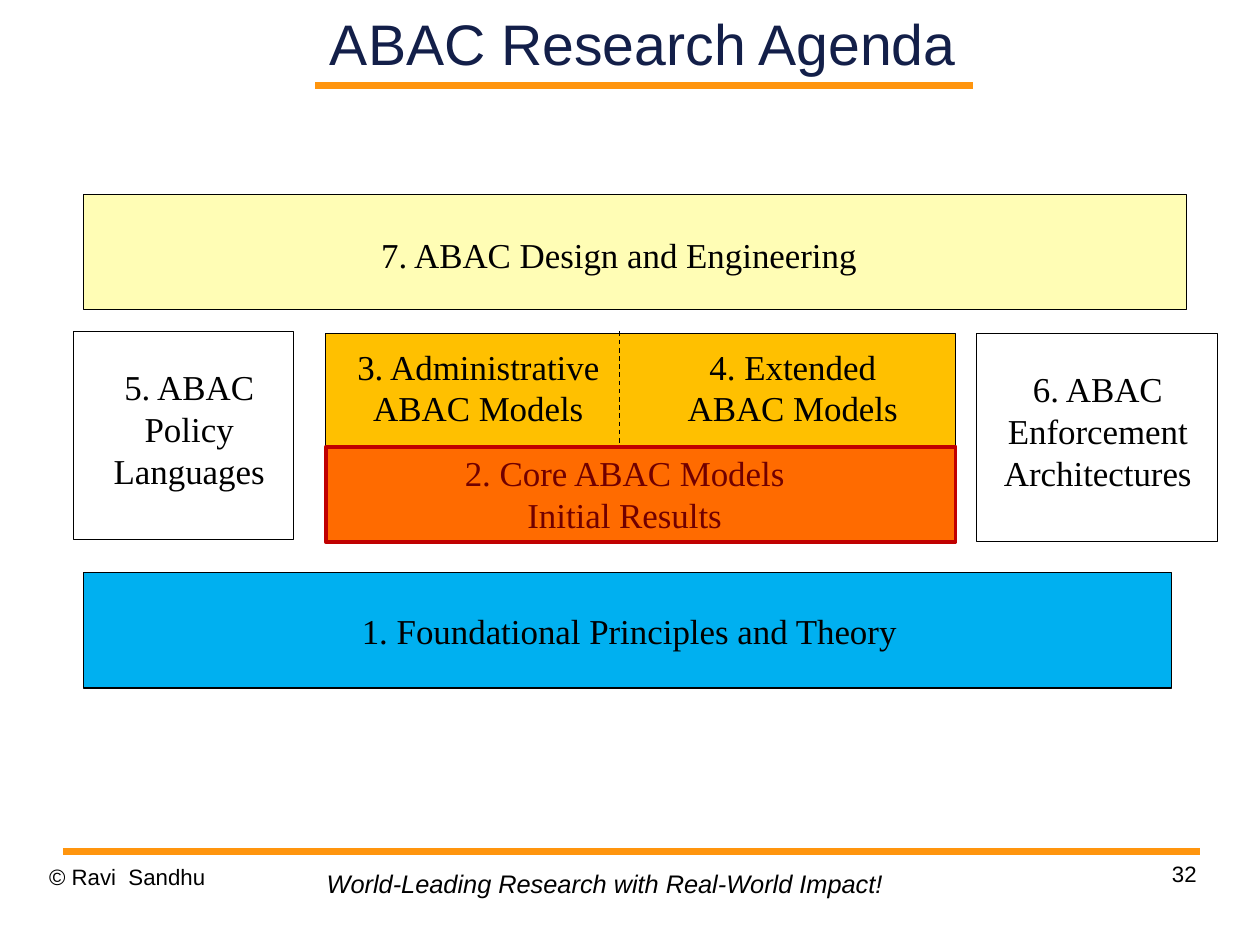
from lxml.etree import SubElement
from pptx import Presentation
from pptx.dml.color import RGBColor
from pptx.enum.dml import MSO_LINE
from pptx.enum.shapes import MSO_CONNECTOR, MSO_SHAPE
from pptx.enum.text import MSO_ANCHOR, MSO_AUTO_SIZE, PP_ALIGN
from pptx.oxml.ns import qn
from pptx.util import Cm, Pt

PX = 9144  # EMU per px, 100 px to the inch
COLORS = {
    "black": "000000", "white": "FFFFFF", "navy": "131F49", "orange": "FF950E",
    "blue": "00B0F0", "amber": "FFC000", "yellow": "FFFDB5",
    "red": "FF0000", "dark red": "C00000",
}
RGB = {name: RGBColor.from_string(value) for name, value in COLORS.items()}

presentation = Presentation()
presentation.slide_width = Cm(28)
presentation.slide_height = Cm(21)
slide = presentation.slides.add_slide(presentation.slide_layouts[5])
shapes = slide.shapes


def add_rectangle(place, fill, line=None, width=0.75):
    rectangle = shapes.add_shape(MSO_SHAPE.RECTANGLE, *[n * PX for n in place])
    rectangle.shadow.inherit = False
    rectangle.fill.solid()
    rectangle.fill.fore_color.rgb = RGB[fill]
    if line:
        rectangle.line.color.rgb = RGB[line]
        rectangle.line.width = Pt(width)
    else:
        rectangle.line.fill.background()
    return rectangle


def add_line(ends, color, width):
    line = shapes.add_connector(MSO_CONNECTOR.STRAIGHT, *[n * PX for n in ends])
    line.line.color.rgb = RGB[color]
    line.line.width = Pt(width)
    SubElement(line._element.spPr, qn("a:effectLst"))
    return line


# Title and rules
title = shapes.title
title.left, title.top, title.width, title.height = [n * PX for n in (241, 0, 643, 75)]
frame = title.text_frame
frame.text = "ABAC Research Agenda"
frame.auto_size = MSO_AUTO_SIZE.NONE
frame.vertical_anchor = MSO_ANCHOR.MIDDLE
frame.margin_left = frame.margin_right = frame.margin_top = frame.margin_bottom = 0
paragraph = frame.paragraphs[0]
paragraph.alignment = PP_ALIGN.CENTER
paragraph.font.name = "Arial"
paragraph.font.size = Pt(36)
paragraph.font.color.rgb = RGB["navy"]

for ends in ((276, 75, 851, 75), (55, 745, 1050, 745)):
    add_line(ends, "orange", 4.31)

# Footer: text, place, margins, size, italic, alignment
footers = [
    ("32", (790, 753, 257, 57), (0, 0), 14, False, PP_ALIGN.RIGHT),
    ("World-Leading Research with Real-World Impact!",
     (276, 755, 508, 37), (10, 5), 16, True, PP_ALIGN.LEFT),
    ("© Ravi  Sandhu", (43, 755, 257, 57), (0, 0), 14, False, PP_ALIGN.LEFT),
]
for text, place, (side, end), size, italic, alignment in footers:
    frame = shapes.add_textbox(*[n * PX for n in place]).text_frame
    frame.text = text
    frame.word_wrap = not italic
    frame.margin_left = frame.margin_right = side * PX
    frame.margin_top = frame.margin_bottom = end * PX
    paragraph = frame.paragraphs[0]
    paragraph.alignment = alignment
    paragraph.font.name = "Arial"
    paragraph.font.size = Pt(size)
    paragraph.font.italic = italic
    paragraph.font.color.rgb = RGB["black"]

# Agenda blocks
for place, fill in [
    ((73, 501, 952, 101), "blue"),
    ((285, 292, 551, 182), "amber"),
    ((64, 290, 193, 182), "white"),
    ((854, 292, 211, 182), "white"),
    ((73, 170, 965, 101), "yellow"),
]:
    add_rectangle(place, fill, "black")

add_line((285, 391, 836, 391), "black", 0.75).line.dash_style = MSO_LINE.DASH

# Block labels
for text, place, fill in [
    ("1. Foundational Principles and Theory", (147, 527, 807, 48), "blue"),
    ("2. Core ABAC Models\nInitial Results", (303, 389, 487, 85), "amber"),
    ("3. Administrative\nABAC Models", (295, 296, 247, 85), "amber"),
    ("4. Extended\nABAC Models", (579, 296, 229, 85), "amber"),
    ("5. ABAC Policy Languages", (83, 314, 165, 122), "white"),
    ("6. ABAC Enforcement Architectures", (864, 316, 193, 122), "white"),
    ("7. ABAC Design and Engineering", (138, 198, 807, 48), "yellow"),
]:
    frame = add_rectangle(place, fill).text_frame
    frame.text = text
    frame.word_wrap = True
    frame.vertical_anchor = MSO_ANCHOR.TOP
    frame.margin_left = frame.margin_right = 11 * PX
    frame.margin_top = frame.margin_bottom = 6 * PX
    for paragraph in frame.paragraphs:
        paragraph.alignment = PP_ALIGN.CENTER
        paragraph.font.name = "Times New Roman"
        paragraph.font.size = Pt(22)
        paragraph.font.color.rgb = RGB["black"]

add_line((542, 290, 542, 391), "black", 0.75).line.dash_style = MSO_LINE.DASH

# Translucent highlight over the core models
highlight = add_rectangle((285, 391, 551, 83), "red", "dark red", 2.5)
color = highlight._element.spPr.find(qn("a:solidFill")).find(qn("a:srgbClr"))
SubElement(color, qn("a:alpha"), val="44000")

presentation.save("out.pptx")
